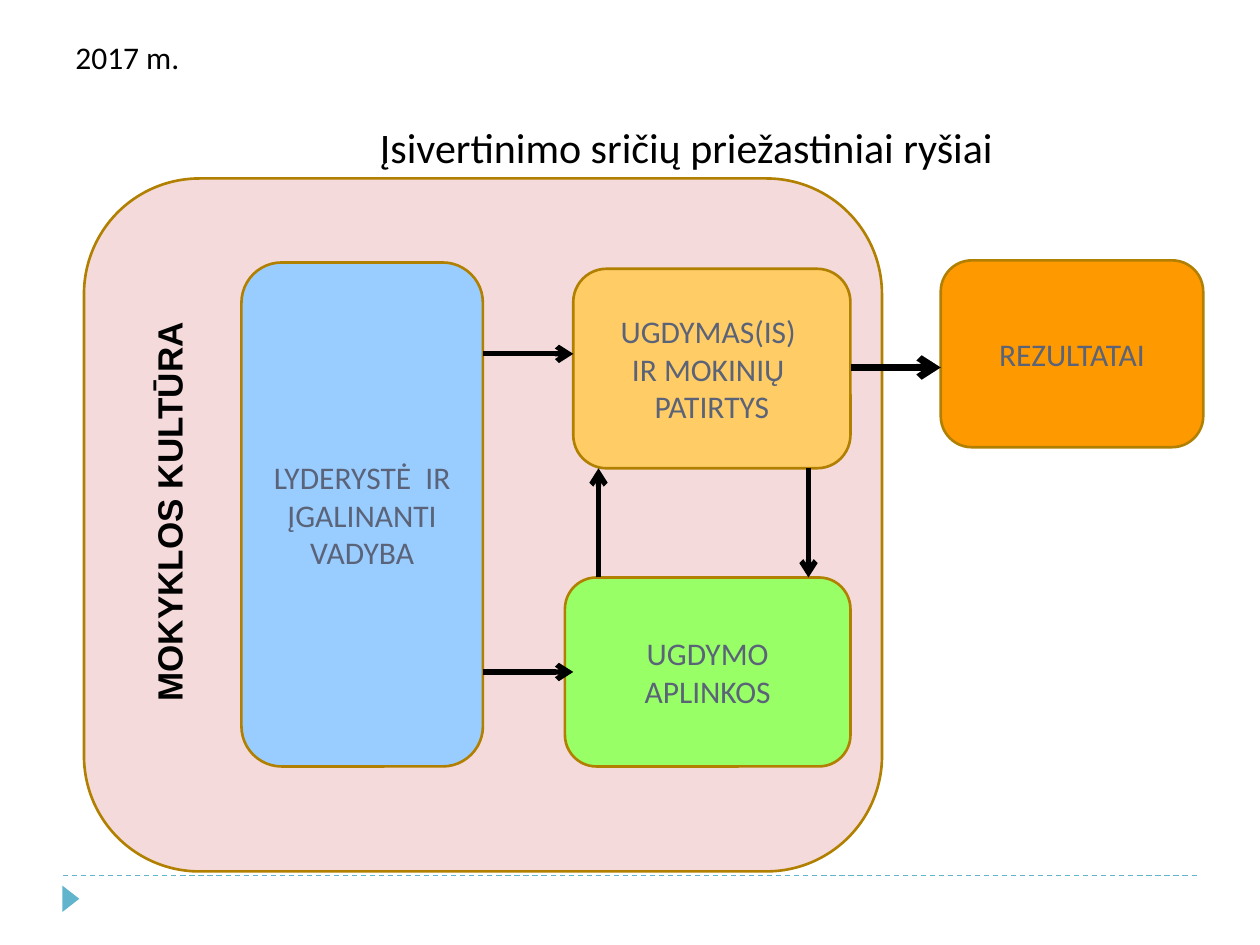
from dataclasses import dataclass

from lxml.etree import SubElement
from pptx import Presentation
from pptx.dml.color import RGBColor
from pptx.enum.dml import MSO_LINE
from pptx.enum.shapes import MSO_CONNECTOR, MSO_SHAPE as Preset
from pptx.enum.text import MSO_ANCHOR as Anchor, MSO_AUTO_SIZE as AutoSize, PP_ALIGN as Align
from pptx.oxml.ns import qn
from pptx.util import Inches, Pt

WIDTH, HEIGHT = 10, 7.5
COLUMNS, ROWS = 120, 90
BLACK, SLATE, BRONZE, TEAL = "000000", "5A6378", "B28000", "60B5CC"


@dataclass(frozen=True)
class Area:
    left: float
    top: float
    columns: float
    rows: float
    fill: str
    lines: tuple[str, ...] = ()


@dataclass(frozen=True)
class Label:
    left: float
    top: float
    columns: float
    rows: float
    wording: str
    size: int
    font: str = "Calibri"
    bold: bool = False
    upward: bool = False


@dataclass(frozen=True)
class Link:
    start: tuple[float, float]
    end: tuple[float, float]
    weight: float = 3
    color: str = BLACK
    arrow: bool = True


AREAS = (
    Area(8, 17, 76, 66, "F4DADA"),
    Area(23, 25, 23, 48, "99CCFF", ("LYDERYSTĖ  IR ĮGALINANTI VADYBA",)),
    Area(54.6, 25.6, 26.4, 19, "FFCC66", ("UGDYMAS(IS) ", "IR MOKINIŲ ", "PATIRTYS")),
    Area(53.8, 55, 27.2, 18, "99FF66", ("UGDYMO APLINKOS",)),
    Area(89.6, 24.8, 25, 17.8, "FF9900", ("REZULTATAI",)),
)
LINKS = (
    Link((46, 33.7), (54.6, 33.7)),
    Link((46, 64), (54.6, 64)),
    Link((57, 55), (57, 44.6)),
    Link((77, 44.6), (77, 55)),
    Link((81, 35), (89.6, 35), weight=4),
)
LABELS = (
    Label(12.8, 29, 6.5, 39, "MOKYKLOS KULTŪRA", 20, "Arial", bold=True, upward=True),
    Label(35, 11, 81.6, 6.1, "Įsivertinimo sričių priežastiniai ryšiai", 24),
    Label(6, 3, 34, 5, "2017 m.", 18),
)
FOOTER_RULE = Link((6, 83.4), (114, 83.4), 0.75, TEAL, arrow=False)


def across(columns: float) -> int:
    return Inches(WIDTH * columns / COLUMNS)


def down(rows: float) -> int:
    return Inches(HEIGHT * rows / ROWS)


def paint(color_format, color: str) -> None:
    color_format.rgb = RGBColor.from_string(color)


def write(paragraph, wording: str, size: int, color: str, font: str = "Calibri", bold: bool = False) -> None:
    run = paragraph.add_run()
    run.text = wording
    run.font.name, run.font.size, run.font.bold = font, Pt(size), bold
    paint(run.font.color, color)


def draw_area(slide, area: Area) -> None:
    box = slide.shapes.add_shape(
        Preset.ROUNDED_RECTANGLE, across(area.left), down(area.top), across(area.columns), down(area.rows)
    )
    box.shadow.inherit = False
    box.fill.solid()
    paint(box.fill.fore_color, area.fill)
    paint(box.line.color, BRONZE)
    box.line.width = Pt(1.5)
    frame = box.text_frame
    frame.word_wrap, frame.vertical_anchor = True, Anchor.MIDDLE
    for index, wording in enumerate(area.lines):
        paragraph = frame.add_paragraph() if index else frame.paragraphs[0]
        paragraph.alignment = Align.CENTER
        write(paragraph, wording, 18, SLATE)


def draw_label(slide, label: Label) -> None:
    frame = slide.shapes.add_textbox(
        across(label.left), down(label.top), across(label.columns), down(label.rows)
    ).text_frame
    frame.word_wrap, frame.auto_size = True, AutoSize.SHAPE_TO_FIT_TEXT
    if label.upward:
        frame.vertical_anchor = Anchor.MIDDLE
        frame._txBody.bodyPr.set("vert", "vert270")
    write(frame.paragraphs[0], label.wording, label.size, BLACK, label.font, label.bold)


def draw_link(slide, link: Link) -> None:
    (x1, y1), (x2, y2) = link.start, link.end
    connector = slide.shapes.add_connector(
        MSO_CONNECTOR.STRAIGHT, across(x1), down(y1), across(x2), down(y2)
    )
    paint(connector.line.color, link.color)
    connector.line.width = Pt(link.weight)
    if link.arrow:
        SubElement(connector.line._get_or_add_ln(), qn("a:tailEnd"), type="arrow")
    else:
        connector.line.dash_style = MSO_LINE.DASH
    SubElement(connector._element.spPr, qn("a:effectLst"))


def draw_footer(slide) -> None:
    draw_link(slide, FOOTER_RULE)
    marker = slide.shapes.add_shape(
        Preset.ISOSCELES_TRIANGLE, across(5.5), down(84.8), across(2.5), down(1.6)
    )
    marker.rotation = 90
    marker.shadow.inherit = False
    marker.fill.solid()
    paint(marker.fill.fore_color, TEAL)
    marker.line.fill.background()


def main() -> None:
    deck = Presentation()
    deck.slide_width, deck.slide_height = Inches(WIDTH), Inches(HEIGHT)
    slide = deck.slides.add_slide(deck.slide_layouts[6])
    draw_footer(slide)
    for area in AREAS:
        draw_area(slide, area)
    for link in LINKS:
        draw_link(slide, link)
    for label in LABELS:
        draw_label(slide, label)
    deck.save("out.pptx")


if __name__ == "__main__":
    main()
